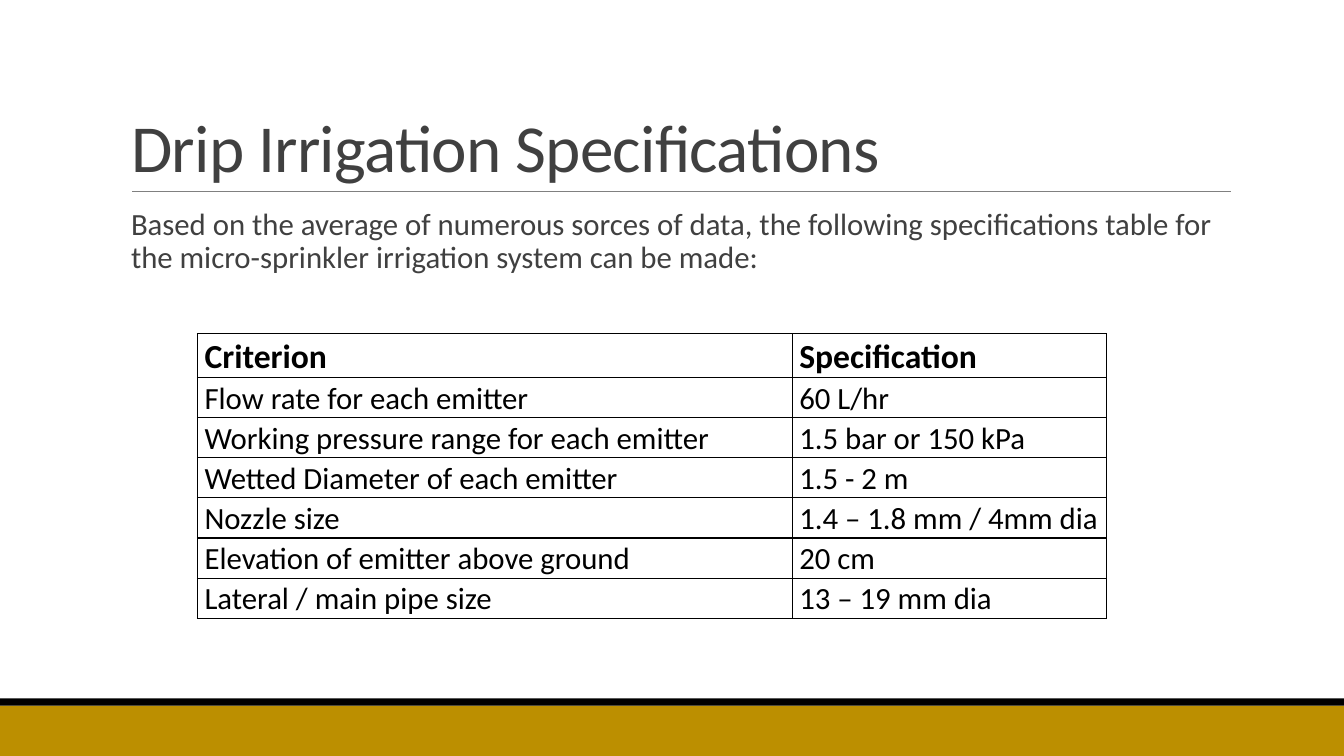
import pptx
import pptx.dml.color
import pptx.enum.shapes
import pptx.enum.text
import pptx.oxml
import pptx.oxml.ns
import pptx.util

SLIDE_WIDTH = pptx.util.Inches(13.33)
SLIDE_HEIGHT = pptx.util.Inches(7.5)
COLUMN = SLIDE_WIDTH / 120
ROW = SLIDE_HEIGHT / 75

COLORS = {
    "band": "BC8F00",
    "band edge": "000000",
    "rule": "808080",
    "heading": "404040",
    "table": "000000",
}

SPECIFICATIONS = [
    ("Criterion", "Specification"),
    ("Flow rate for each emitter", "60 L/hr"),
    ("Working pressure range for each emitter", "1.5 bar or 150 kPa"),
    ("Wetted Diameter of each emitter", "1.5 - 2 m"),
    ("Nozzle size", "1.4 – 1.8 mm / 4mm dia"),
    ("Elevation of emitter above ground", "20 cm"),
    ("Lateral / main pipe size", "13 – 19 mm dia"),
]
INTRODUCTION = (
    "Based on the average of numerous sorces of data, the following "
    "specifications table for the micro-sprinkler irrigation system can be made:"
)


def columns(count):
    return round(count * COLUMN)


def rows(count):
    return round(count * ROW)


def color(name):
    return pptx.dml.color.RGBColor.from_string(COLORS[name])


def apply_format(target, values):
    for name, value in values.items():
        setattr(target, name, value)


def add_xml(parent, tag, content="", attributes=""):
    """Append one DrawingML element to parent."""
    namespace = pptx.oxml.ns.nsdecls("a")
    parent.append(pptx.oxml.parse_xml(
        f"<a:{tag} {namespace} {attributes}>{content}</a:{tag}>"))


def write_text(frame, text, color_name, font, paragraph, margins):
    apply_format(frame, {"word_wrap": True, **margins})
    line = frame.paragraphs[0]
    apply_format(line, paragraph)
    run = line.add_run()
    run.text = text
    apply_format(run.font, {"name": "Calibri", **font})
    run.font.color.rgb = color(color_name)
    return line


def add_band(slide, top, height, color_name):
    band = slide.shapes.add_shape(
        pptx.enum.shapes.MSO_SHAPE.RECTANGLE,
        0, rows(top), SLIDE_WIDTH, rows(height))
    band.shadow.inherit = False
    band.fill.solid()
    band.fill.fore_color.rgb = color(color_name)
    band.line.fill.background()


def add_rule(slide, left, right, top):
    rule = slide.shapes.add_connector(
        pptx.enum.shapes.MSO_CONNECTOR.STRAIGHT,
        columns(left), rows(top), columns(right), rows(top))
    rule.line.color.rgb = color("rule")
    rule.line.width = pptx.util.Pt(0.5)
    add_xml(rule._element.spPr, "effectLst")


def fill_placeholder(placeholder, top, height, anchor, text, font, paragraph,
                     margins):
    apply_format(placeholder, {
        "left": columns(10.8), "top": rows(top),
        "width": columns(99), "height": rows(height)})
    apply_format(placeholder.text_frame, {
        "auto_size": pptx.enum.text.MSO_AUTO_SIZE.NONE,
        "vertical_anchor": anchor})
    return write_text(placeholder.text_frame, text, "heading", font,
                      paragraph, margins)


def add_title(slide):
    title = fill_placeholder(
        slide.shapes.title, 3.1, 15.9, pptx.enum.text.MSO_ANCHOR.BOTTOM,
        "Drip Irrigation Specifications", {"size": pptx.util.Pt(48)},
        {"line_spacing": 0.85, "alignment": pptx.enum.text.PP_ALIGN.LEFT}, {})
    title.runs[0].font._element.set("spc", "-50")


def add_introduction(slide):
    introduction = fill_placeholder(
        slide.placeholders[1], 20.2, 44, pptx.enum.text.MSO_ANCHOR.TOP,
        INTRODUCTION, {"size": pptx.util.Pt(22)},
        {"line_spacing": 0.9, "space_before": pptx.util.Pt(12),
         "space_after": pptx.util.Pt(2)},
        {"margin_left": 0, "margin_right": 0})
    properties = introduction._p.get_or_add_pPr()
    properties.set("marL", str(pptx.util.Inches(0.1)))
    properties.set("indent", "0")
    add_xml(properties, "buNone")


def add_cell_borders(cell):
    properties = cell._tc.get_or_add_tcPr()
    line = f'<a:solidFill><a:srgbClr val="{COLORS["table"]}"/></a:solidFill>'
    for side in ("lnL", "lnR", "lnT", "lnB"):
        add_xml(properties, side, line, f'w="{pptx.util.Pt(1)}"')


def add_specifications(slide):
    widths = [columns(53.1), columns(28.08)]
    row_height = rows(3.8)
    table = slide.shapes.add_table(
        len(SPECIFICATIONS), len(widths), columns(17.64), rows(33.1),
        sum(widths), row_height * len(SPECIFICATIONS)).table
    apply_format(table, {"first_row": False, "horz_banding": False})
    for column, width in zip(table.columns, widths):
        column.width = width
    side_margin = pptx.util.Inches(0.07)
    for row_index, entries in enumerate(SPECIFICATIONS):
        table.rows[row_index].height = row_height
        header = row_index == 0
        font = {"size": pptx.util.Pt(24 if header else 22), "bold": header}
        for column_index, entry in enumerate(entries):
            cell = table.cell(row_index, column_index)
            apply_format(cell, {
                "margin_left": side_margin, "margin_right": side_margin,
                "margin_top": 0, "margin_bottom": 0})
            write_text(cell.text_frame, entry, "table", font,
                       {"line_spacing": 1.07}, {})
            add_cell_borders(cell)
            cell.fill.background()


def main():
    presentation = pptx.Presentation()
    apply_format(presentation, {
        "slide_width": SLIDE_WIDTH, "slide_height": SLIDE_HEIGHT})
    slide = presentation.slides.add_slide(presentation.slide_layouts[1])
    add_band(slide, 70, 5, "band")
    add_band(slide, 69.3, 0.7, "band edge")
    add_rule(slide, 11.79, 109.89, 19)
    add_title(slide)
    add_introduction(slide)
    add_specifications(slide)
    presentation.save("out.pptx")


if __name__ == "__main__":
    main()
